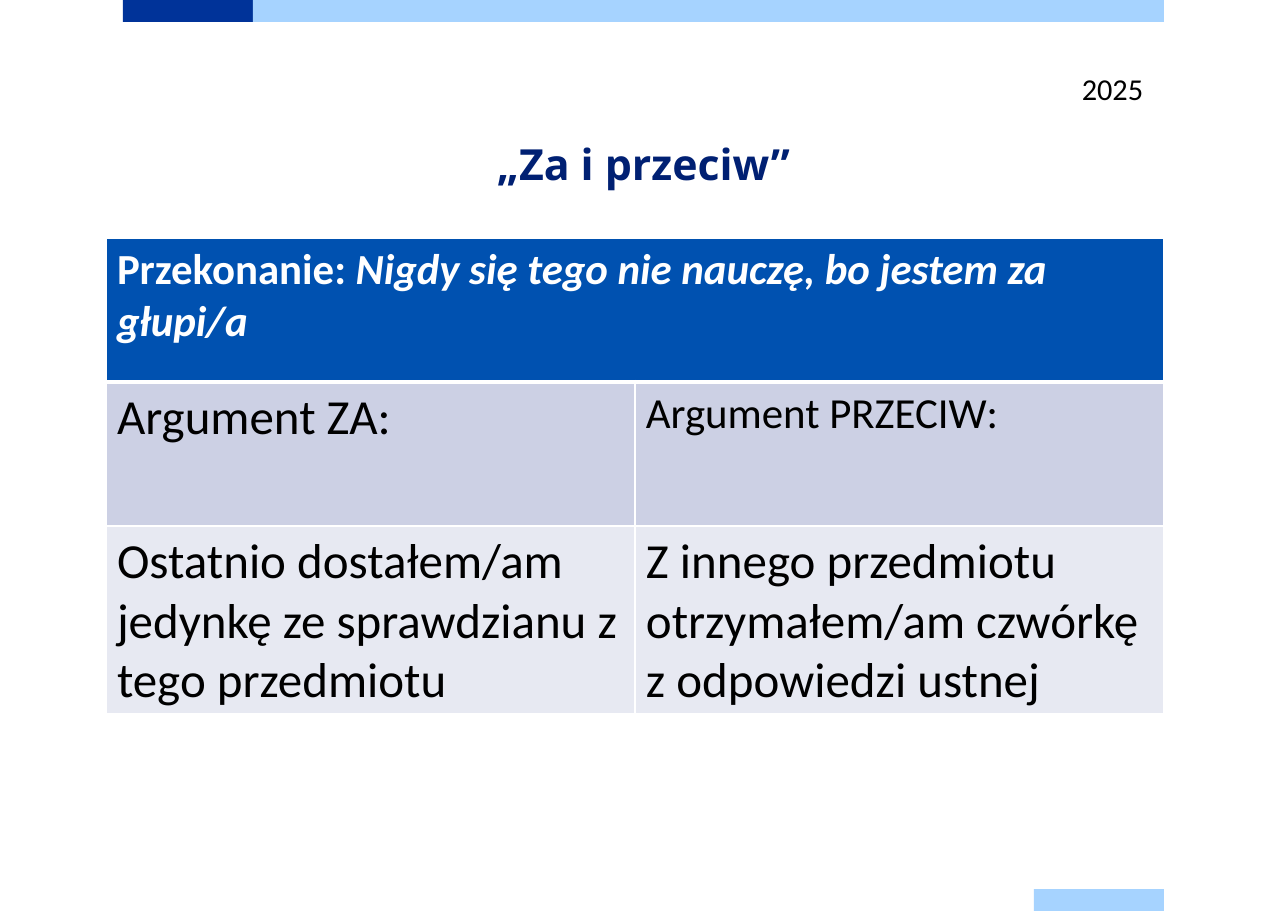
import pptx
import pptx.util
import pptx.dml.color
import pptx.enum.shapes
import pptx.enum.text
import pptx.oxml

PX = 914400 / 110.2
COLORS = {
    "navy": "003399", "sky": "A6D3FF", "title": "002073", "header": "0051B0",
    "labels": "CCD0E4", "arguments": "E7E9F2", "white": "FFFFFF", "black": "000000",
}


def px(*lengths):
    return [pptx.util.Emu(round(length * PX)) for length in lengths]


def write(paragraph, text, size, color="black", font="Calibri", bold=False, italic=False):
    run = paragraph.add_run()
    run.text = text
    run.font.size = pptx.util.Pt(size)
    run.font.name = font
    run.font.bold = bold
    run.font.italic = italic
    run.font.color.rgb = pptx.dml.color.RGBColor.from_string(COLORS[color])


presentation = pptx.Presentation()
presentation.slide_width, presentation.slide_height = px(1288, 911)
slide = presentation.slides.add_slide(presentation.slide_layouts[6])

# Bars at the top and bottom edges
for left, top, width, color in [(123, 0, 130, "navy"), (253, 0, 911, "sky"), (1034, 889, 130, "sky")]:
    bar = slide.shapes.add_shape(
        pptx.enum.shapes.MSO_SHAPE.RECTANGLE, *px(left, top, width, 22))
    bar.shadow.inherit = False
    bar.fill.solid()
    bar.fill.fore_color.rgb = pptx.dml.color.RGBColor.from_string(COLORS[color])
    bar.line.fill.background()

# Title
title = slide.shapes.add_textbox(*px(123, 134, 1041, 130)).text_frame
title.word_wrap = True
title.margin_left = title.margin_top = title.margin_right = title.margin_bottom = 0
heading = title.paragraphs[0]
heading.alignment = pptx.enum.text.PP_ALIGN.CENTER
heading.line_spacing = pptx.util.Pt(36)
write(heading, "„Za i przeciw”", 28, color="title", font="Open Sans", bold=True)

# Table of arguments
arguments = slide.shapes.add_table(3, 2, *px(106, 238, 1058, 432)).table
for column in arguments.columns:
    column.width = px(529)[0]
for row in arguments.rows:
    row.height = px(144)[0]
arguments.cell(0, 0).merge(arguments.cell(0, 1))

for row_index, fill in enumerate(["header", "labels", "arguments"]):
    for cell in arguments.rows[row_index].cells:
        properties = cell._tc.get_or_add_tcPr()
        for side in "LRTB":
            heavy = (row_index, side) in [(0, "B"), (1, "T")]
            properties.append(pptx.oxml.parse_xml(
                f'<a:ln{side} xmlns:a="http://schemas.openxmlformats.org/drawingml/2006/main" '
                f'w="{38100 if heavy else 12700}"><a:solidFill><a:srgbClr val="{COLORS["white"]}"/>'
                f'</a:solidFill></a:ln{side}>'))
        cell.fill.solid()
        cell.fill.fore_color.rgb = pptx.dml.color.RGBColor.from_string(COLORS[fill])

belief = arguments.cell(0, 0).text_frame.paragraphs[0]
write(belief, "Przekonanie: ", 28, color="white", bold=True)
write(belief, "Nigdy się tego nie nauczę, bo jestem za głupi/a", 28,
      color="white", bold=True, italic=True)

for row_index, column_index, text, size in [
    (1, 0, "Argument ZA:", 32),
    (1, 1, "Argument PRZECIW:", 28),
    (2, 0, "Ostatnio dostałem/am jedynkę ze sprawdzianu z tego przedmiotu", 32),
    (2, 1, "Z innego przedmiotu otrzymałem/am czwórkę z odpowiedzi ustnej", 32),
]:
    write(arguments.cell(row_index, column_index).text_frame.paragraphs[0], text, size)

# Year
year = slide.shapes.add_textbox(*px(1071, 65, 217, 44)).text_frame
year.word_wrap = True
write(year.paragraphs[0], "2025", 19.8)

presentation.save("out.pptx")
